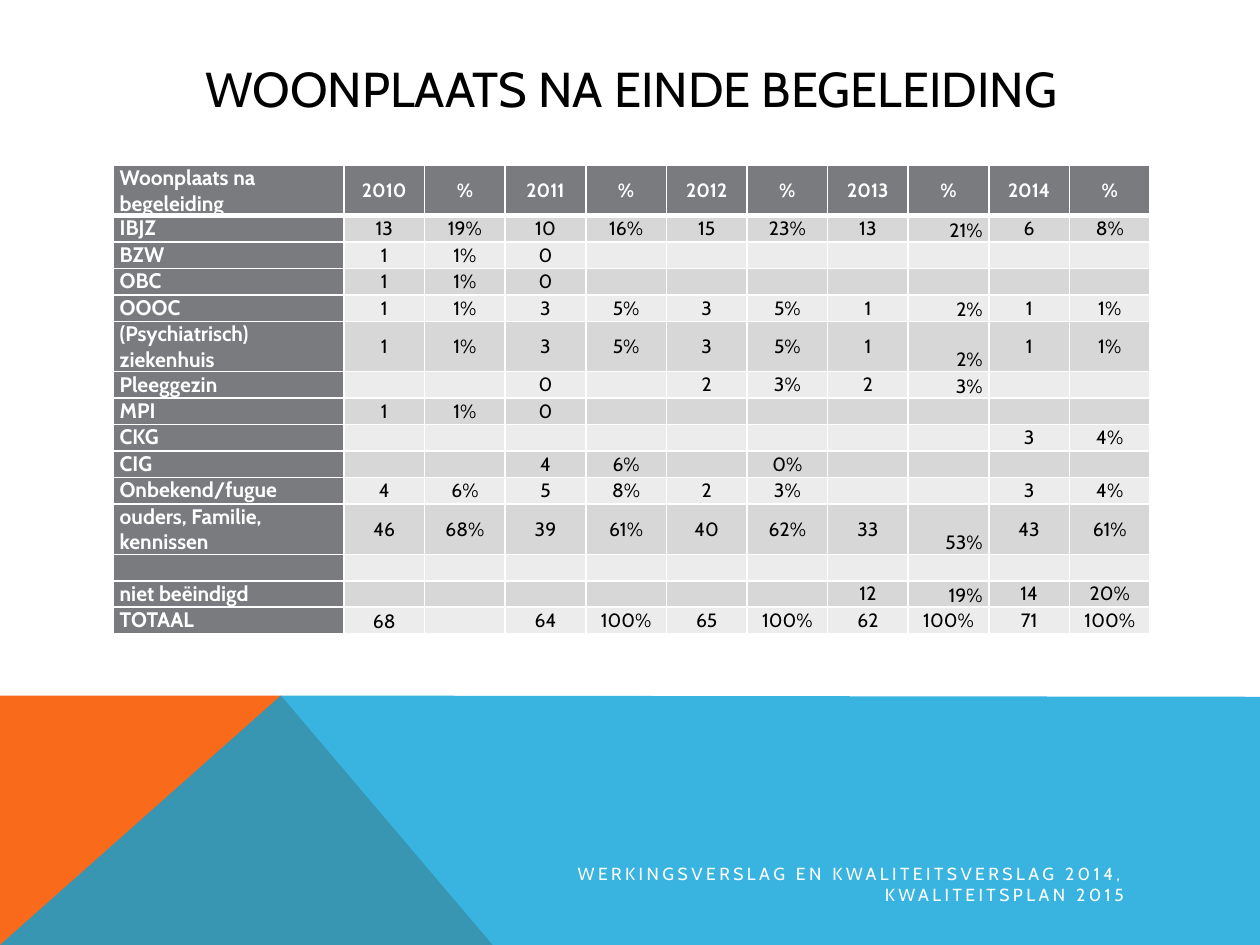
"""Builds the slide on where clients live after the end of guidance."""
from lxml import etree
from pptx import Presentation
from pptx.dml.color import RGBColor
from pptx.enum.text import MSO_ANCHOR, PP_ALIGN
from pptx.oxml.ns import qn
from pptx.util import Inches, Pt

LEFT, CENTER, RIGHT = PP_ALIGN.LEFT, PP_ALIGN.CENTER, PP_ALIGN.RIGHT
TOP, MIDDLE, BOTTOM = MSO_ANCHOR.TOP, MSO_ANCHOR.MIDDLE, MSO_ANCHOR.BOTTOM
FONT = "Cabin"
BLACK = RGBColor(0x00, 0x00, 0x00)
WHITE = RGBColor(0xFF, 0xFF, 0xFF)
GRAY = RGBColor(0x79, 0x7B, 0x7E)
DARK_BAND = RGBColor(0xD7, 0xD7, 0xD8)
LIGHT_BAND = RGBColor(0xEC, 0xEC, 0xEC)
ORANGE = RGBColor(0xF9, 0x6A, 0x1B)
BLUE = RGBColor(0x08, 0xA1, 0xD9)

ROWS = [
    ["Woonplaats na begeleiding", "2010", "%", "2011", "%", "2012", "%", "2013", "%", "2014", "%"],
    ["IBJZ", "13", "19%", "10", "16%", "15", "23%", "13", "21%", "6", "8%"],
    ["BZW", "1", "1%", "0", "", "", "", "", "", "", ""],
    ["OBC", "1", "1%", "0", "", "", "", "", "", "", ""],
    ["OOOC", "1", "1%", "3", "5%", "3", "5%", "1", "2%", "1", "1%"],
    ["(Psychiatrisch) ziekenhuis", "1", "1%", "3", "5%", "3", "5%", "1", "2%", "1", "1%"],
    ["Pleeggezin", "", "", "0", "", "2", "3%", "2", "3%", "", ""],
    ["MPI", "1", "1%", "0", "", "", "", "", "", "", ""],
    ["CKG", "", "", "", "", "", "", "", "", "3", "4%"],
    ["CIG", "", "", "4", "6%", "", "0%", "", "", "", ""],
    ["Onbekend/fugue", "4", "6%", "5", "8%", "2", "3%", "", "", "3", "4%"],
    ["ouders, Familie, kennissen", "46", "68%", "39", "61%", "40", "62%", "33", "53%", "43", "61%"],
    ["", "", "", "", "", "", "", "", "", "", ""],
    ["niet beëindigd", "", "", "", "", "", "", "12", "19%", "14", "20%"],
    ["TOTAAL", "68", "", "64", "100%", "65", "100%", "62", "100%", "71", "100%"],
]
TALL_ROWS = (0, 5, 11)
TOTAL_ROW = len(ROWS) - 1
PERCENT_2013 = 8


def write(frame, text, size, color, align, anchor, bold=False):
    frame.word_wrap = True
    frame.vertical_anchor = anchor
    paragraph = frame.paragraphs[0]
    paragraph.alignment = align
    run = paragraph.add_run()
    run.text = text
    run.font.name = FONT
    run.font.size = Pt(size)
    run.font.bold = bold
    run.font.color.rgb = color
    return run


def add_border(cell, side, width):
    properties = cell._tc.get_or_add_tcPr()
    line = etree.SubElement(properties, qn(f"a:ln{side}"), w=str(Pt(width)))
    fill = etree.SubElement(line, qn("a:solidFill"))
    etree.SubElement(fill, qn("a:srgbClr"), val=str(WHITE))


presentation = Presentation()
presentation.slide_width = Inches(10)
presentation.slide_height = Inches(7.5)
slide = presentation.slides.add_slide(presentation.slide_layouts[6])

for color, opacity, points in [
    (ORANGE, 100, [(0, 7.5), (0, 5.52), (2.23, 5.52), (3.91, 7.5)]),
    (BLUE, 80, [(0, 7.5), (2.23, 5.52), (10, 5.53), (10, 7.5)]),
]:
    corners = [(Inches(x), Inches(y)) for x, y in points]
    builder = slide.shapes.build_freeform(*corners[0])
    builder.add_line_segments(corners[1:], close=True)
    shape = builder.convert_to_shape()
    shape.shadow.inherit = False
    shape.fill.solid()
    shape.fill.fore_color.rgb = color
    shape.line.fill.background()
    if opacity < 100:
        color_element = shape._element.spPr.find(f".//{qn('a:srgbClr')}")
        etree.SubElement(color_element, qn("a:alpha"), val=str(opacity * 1000))

title = slide.shapes.add_textbox(Inches(0.9), Inches(0.4), Inches(8.22), Inches(0.6))
write(title.text_frame, "WOONPLAATS NA EINDE BEGELEIDING", 28, BLACK, CENTER, MIDDLE)

table = slide.shapes.add_table(
    len(ROWS), len(ROWS[0]), Inches(0.9), Inches(1.31), Inches(8.23), Inches(3.7)
).table
for index, column in enumerate(table.columns):
    column.width = Inches(0.64 if index else 1.83)

for row_index, row in enumerate(ROWS):
    table.rows[row_index].height = Inches(0.4 if row_index in TALL_ROWS else 0.21)
    for column_index, text in enumerate(row):
        cell = table.cell(row_index, column_index)
        is_label = column_index == 0
        is_heading = is_label or row_index == 0
        cell.margin_left = cell.margin_right = Inches(0.05)
        cell.margin_top = cell.margin_bottom = 0
        for side in "LRTB":
            thick = (row_index, side) in ((0, "B"), (1, "T"))
            add_border(cell, side, 3 if thick else 1)
        cell.fill.solid()
        band = DARK_BAND if row_index % 2 else LIGHT_BAND
        cell.fill.fore_color.rgb = GRAY if is_heading else band

        size = 12 if is_label else 11
        if not text:
            paragraph = cell.text_frame.paragraphs[0]
            etree.SubElement(paragraph._p, qn("a:endParaRPr"), sz=str(size * 100))
            continue
        align, anchor = (LEFT, TOP) if is_label else (CENTER, MIDDLE)
        if column_index == PERCENT_2013 and 0 < row_index < TOTAL_ROW:
            align, anchor = RIGHT, BOTTOM
        elif column_index == 1 and row_index == TOTAL_ROW:
            anchor = BOTTOM
        cell.vertical_anchor = anchor
        write(cell.text_frame, text, size, WHITE if is_heading else BLACK, align, anchor, is_heading)

footer = slide.shapes.add_textbox(Inches(3.85), Inches(6.87), Inches(5.17), Inches(0.3))
footer_run = write(
    footer.text_frame,
    "WERKINGSVERSLAG EN KWALITEITSVERSLAG 2014, KWALITEITSPLAN 2015",
    10, WHITE, RIGHT, MIDDLE,
)
footer_run.font._element.set("spc", "200")

presentation.save("out.pptx")
